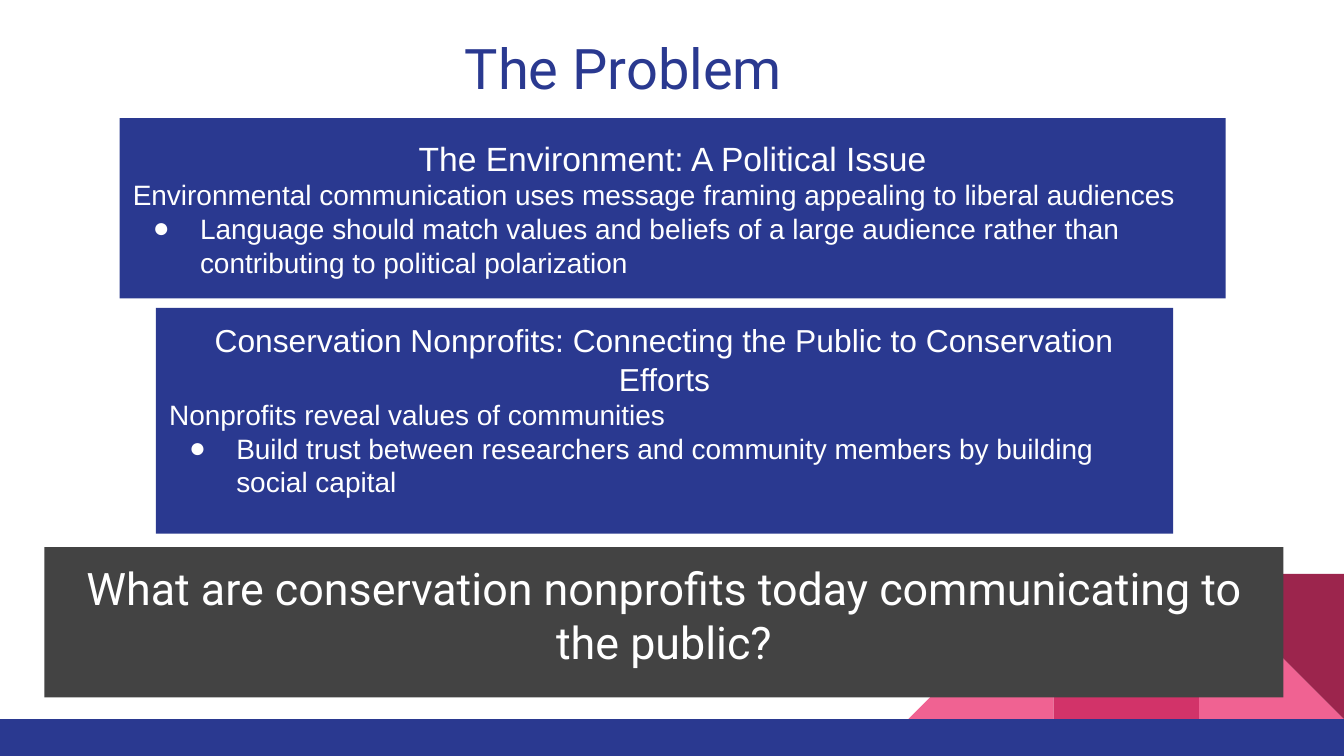
from lxml import etree
from pptx import Presentation
from pptx.dml.color import RGBColor
from pptx.enum.shapes import MSO_SHAPE
from pptx.enum.text import MSO_ANCHOR, PP_ALIGN
from pptx.oxml.ns import qn
from pptx.util import Inches, Pt

RECT, TRIANGLE = MSO_SHAPE.RECTANGLE, MSO_SHAPE.RIGHT_TRIANGLE
TOP = MSO_ANCHOR.TOP
LEFT, CENTER = PP_ALIGN.LEFT, PP_ALIGN.CENTER

COLORS = {"blue": "2A3990", "pink": "F06292", "rose": "D23369",
          "wine": "9C254D", "gray": "434343", "white": "FFFFFF"}
TITLE = "The Problem"
QUESTION = "What are conservation nonprofits today communicating to the public?"
TOPICS = [
    {"at": (0.89, 0.88, 8.23, 1.34), "size": 18, "spacing": 1.15,
     "heading": "The Environment: A Political Issue",
     "claim": "Environmental communication uses message framing appealing to liberal audiences",
     "bullet": "Language should match values and beliefs of a large audience rather than "
               "contributing to political polarization"},
    {"at": (1.16, 2.29, 7.57, 1.68), "size": 17, "spacing": 1.0,
     "heading": "Conservation Nonprofits: Connecting the Public to Conservation Efforts",
     "claim": "Nonprofits reveal values of communities",
     "bullet": "Build trust between researchers and community members by building "
               "social capital"},
]
WIDTH = 10
HEIGHT = WIDTH * 9 / 16
TILE = 1.08
BAR_TOP = 5.35
TILES = [(TRIANGLE, 2, "pink", 0, False), (TRIANGLE, 0, "pink", 0, True),
         (RECT, 1, "rose", 0, False), (TRIANGLE, 2, "wine", 180, False)]


def add_block(page, kind, at, color):
    shape = page.shapes.add_shape(kind, *map(Inches, at))
    shape.shadow.inherit = False
    shape.fill.solid()
    shape.fill.fore_color.rgb = RGBColor.from_string(COLORS[color])
    shape.line.fill.background()
    return shape


def prepare_frame(shape):
    frame = shape.text_frame
    frame.word_wrap = True
    frame.vertical_anchor = TOP
    frame.margin_left = frame.margin_right = Inches(0.1)
    frame.margin_top = frame.margin_bottom = Inches(0.1)
    return frame


def write(para, text, size, font, color="white", align=LEFT):
    para.text = text
    para.alignment = align
    para.font.size = Pt(size)
    para.font.name = font
    para.font.color.rgb = RGBColor.from_string(COLORS[color])


def add_bullet(para):
    props = para._p.get_or_add_pPr()
    props.set("marL", str(Inches(0.5)))
    props.set("indent", str(Inches(-0.35)))
    tint = etree.SubElement(props, qn("a:buClr"))
    etree.SubElement(tint, qn("a:srgbClr"), val=COLORS["white"])
    etree.SubElement(props, qn("a:buFont"), typeface="Arial")
    etree.SubElement(props, qn("a:buChar"), char="●")


def add_topic(page, topic):
    frame = prepare_frame(add_block(page, RECT, topic["at"], "blue"))
    heading = frame.paragraphs[0]
    heading.line_spacing = topic["spacing"]
    write(heading, topic["heading"], topic["size"], "Arial", align=CENTER)
    write(frame.add_paragraph(), topic["claim"], 15, "Arial")
    point = frame.add_paragraph()
    add_bullet(point)
    write(point, topic["bullet"], 15, "Arial")


def main():
    """Build the slide about the problem and save it."""
    deck = Presentation()
    deck.slide_width, deck.slide_height = Inches(WIDTH), Inches(HEIGHT)
    page = deck.slides.add_slide(deck.slide_layouts[6])

    for kind, column, color, turn, mirrored in TILES:
        left = WIDTH - (3 - column) * TILE
        tile = add_block(page, kind, (left, BAR_TOP - TILE, TILE, TILE), color)
        tile.rotation = turn
        if mirrored:
            tile._element.spPr.xfrm.set("flipH", "1")
    add_block(page, RECT, (0, BAR_TOP, WIDTH, HEIGHT - BAR_TOP), "blue")

    box = page.shapes.add_textbox(*map(Inches, (3.36, 0.15, 2.66, 0.66)))
    write(prepare_frame(box).paragraphs[0], TITLE, 30, "Roboto", "blue")

    environment, nonprofits = TOPICS
    add_topic(page, environment)
    banner = add_block(page, RECT, (0.33, 4.07, 9.22, 1.12), "gray")
    write(prepare_frame(banner).paragraphs[0], QUESTION, 24, "Roboto", align=CENTER)
    add_topic(page, nonprofits)

    deck.save("out.pptx")


if __name__ == "__main__":
    main()
